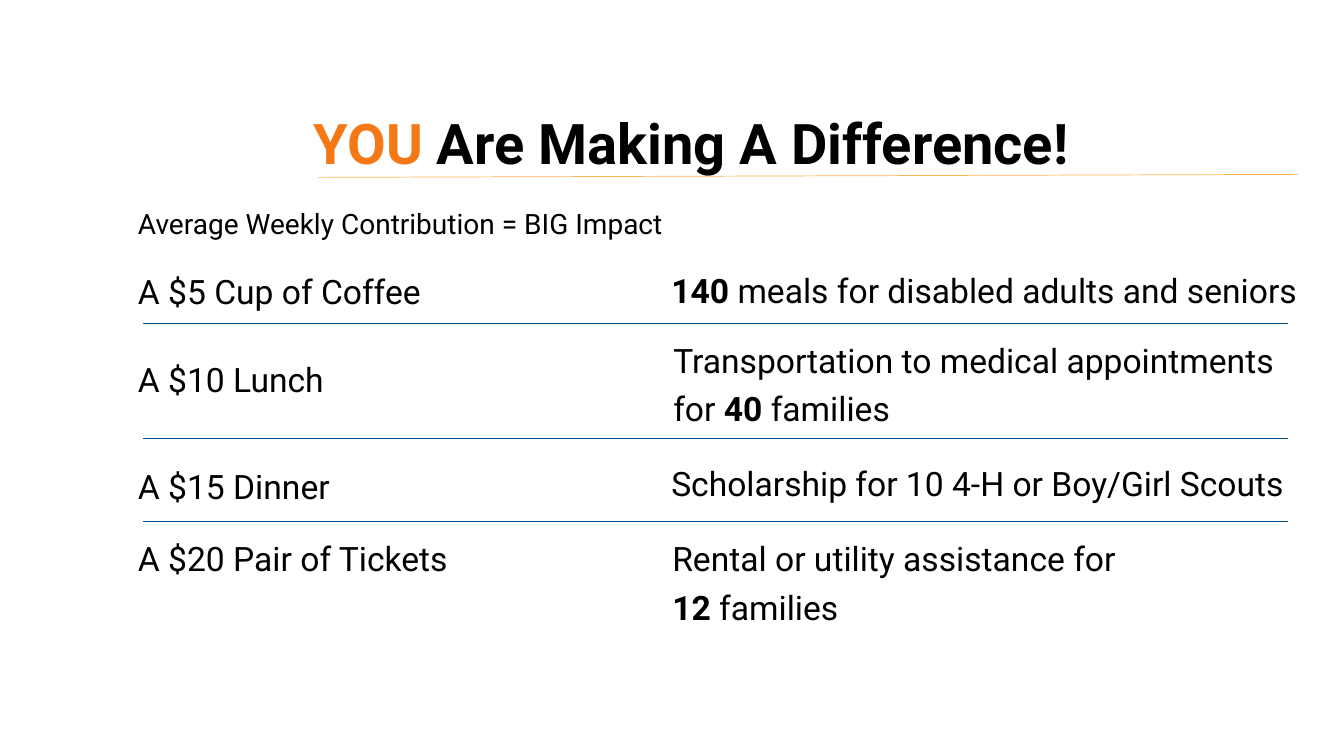
from collections import namedtuple
from dataclasses import dataclass

from lxml.etree import SubElement
from pptx import Presentation
from pptx.dml.color import RGBColor
from pptx.enum.shapes import MSO_CONNECTOR
from pptx.enum.text import MSO_ANCHOR, MSO_AUTO_SIZE, PP_ALIGN
from pptx.oxml.ns import qn
from pptx.util import Emu, Pt

PX_PER_INCH = 100
Box = namedtuple("Box", "left top width height")
Row = namedtuple("Row", "gift gift_top impact impact_left impact_top impact_width impact_height")


@dataclass(frozen=True)
class Theme:
    font: str = "Roboto"
    ink: str = "000000"
    accent: str = "F57814"
    title_rule: str = "FFB351"
    row_rule: str = "005191"
    title_size: int = 40
    body_size: int = 24
    intro_size: int = 20
    rule_width: float = 0.5


THEME = Theme()

ROWS = [
    Row("A $5 Cup of Coffee", 63,
        [("140 ", True), ("meals for disabled adults and seniors", False)], 529, 62, 649, 55),
    Row("A $10 Lunch", 150,
        [("Transportation to medical appointments for ", False), ("40 ", True), ("families", False)],
        531, 131, 647, 103),
    Row("A $15 Dinner", 256,
        [("Scholarship for 10 4-H or Boy/Girl Scouts", False)], 529, 253, 647, 55),
    Row("A $20 Pair of Tickets", 328,
        [("Rental or utility assistance for ", False), ("12", True), (" families", False)],
        530, 328, 480, 103),
]
ROW_RULE_TOPS = [128, 242, 324]


def px(length):
    return Emu(round(length * 914400 / PX_PER_INCH))


def write(frame, runs, size=THEME.body_size, color=THEME.ink, spacing=1.2, anchor=MSO_ANCHOR.TOP):
    frame.word_wrap = True
    frame.auto_size = MSO_AUTO_SIZE.NONE
    frame.vertical_anchor = anchor
    paragraph = frame.paragraphs[0]
    paragraph.alignment = PP_ALIGN.LEFT
    paragraph.line_spacing = spacing
    for words, bold, *own_color in runs:
        run = paragraph.add_run()
        run.text = words
        run.font.name = THEME.font
        run.font.size = Pt(size)
        run.font.bold = bold
        run.font.color.rgb = RGBColor.from_string(own_color[0] if own_color else color)


def add_text(slide, box, runs, **style):
    write(slide.shapes.add_textbox(*map(px, box)).text_frame, runs, **style)


def add_rule(slide, start, end, color):
    rule = slide.shapes.add_connector(MSO_CONNECTOR.STRAIGHT, *map(px, start + end))
    rule.line.color.rgb = RGBColor.from_string(color)
    rule.line.width = Pt(THEME.rule_width)
    SubElement(rule.element.spPr, qn("a:effectLst"))
    return rule


def add_heading(slide, box):
    title = slide.shapes.title
    title.left, title.top, title.width, title.height = map(px, box)
    write(title.text_frame,
          [("YOU", True, THEME.accent), (" Are Making A Difference!", True)],
          size=THEME.title_size, spacing=0.9, anchor=MSO_ANCHOR.BOTTOM)
    bottom = box.top + box.height
    rule = add_rule(slide, (box.left + 14, bottom - 4),
                    (box.left + box.width + 12, bottom - 7), THEME.title_rule)
    title.element.addprevious(rule.element)


def add_contributions(slide, box):
    add_text(slide, Box(box.left, box.top, 557, 47),
             [("Average Weekly Contribution = BIG Impact", False)], size=THEME.intro_size)
    for row in ROWS:
        add_text(slide, Box(box.left, box.top + row.gift_top, 504, 55), [(row.gift, False)])
        add_text(slide, Box(box.left + row.impact_left, box.top + row.impact_top,
                            row.impact_width, row.impact_height), row.impact)
    for offset in ROW_RULE_TOPS:
        top = box.top + offset
        add_rule(slide, (box.left + 15, top), (box.left + box.width - 28, top), THEME.row_rule)


def main():
    deck = Presentation()
    deck.slide_width, deck.slide_height = px(1333), px(750)
    slide = deck.slides.add_slide(deck.slide_layouts.get_by_name("Title Only"))
    add_heading(slide, Box(301, 54, 975, 126))
    add_contributions(slide, Box(127, 193, 1178, 431))
    deck.save("out.pptx")


if __name__ == "__main__":
    main()
